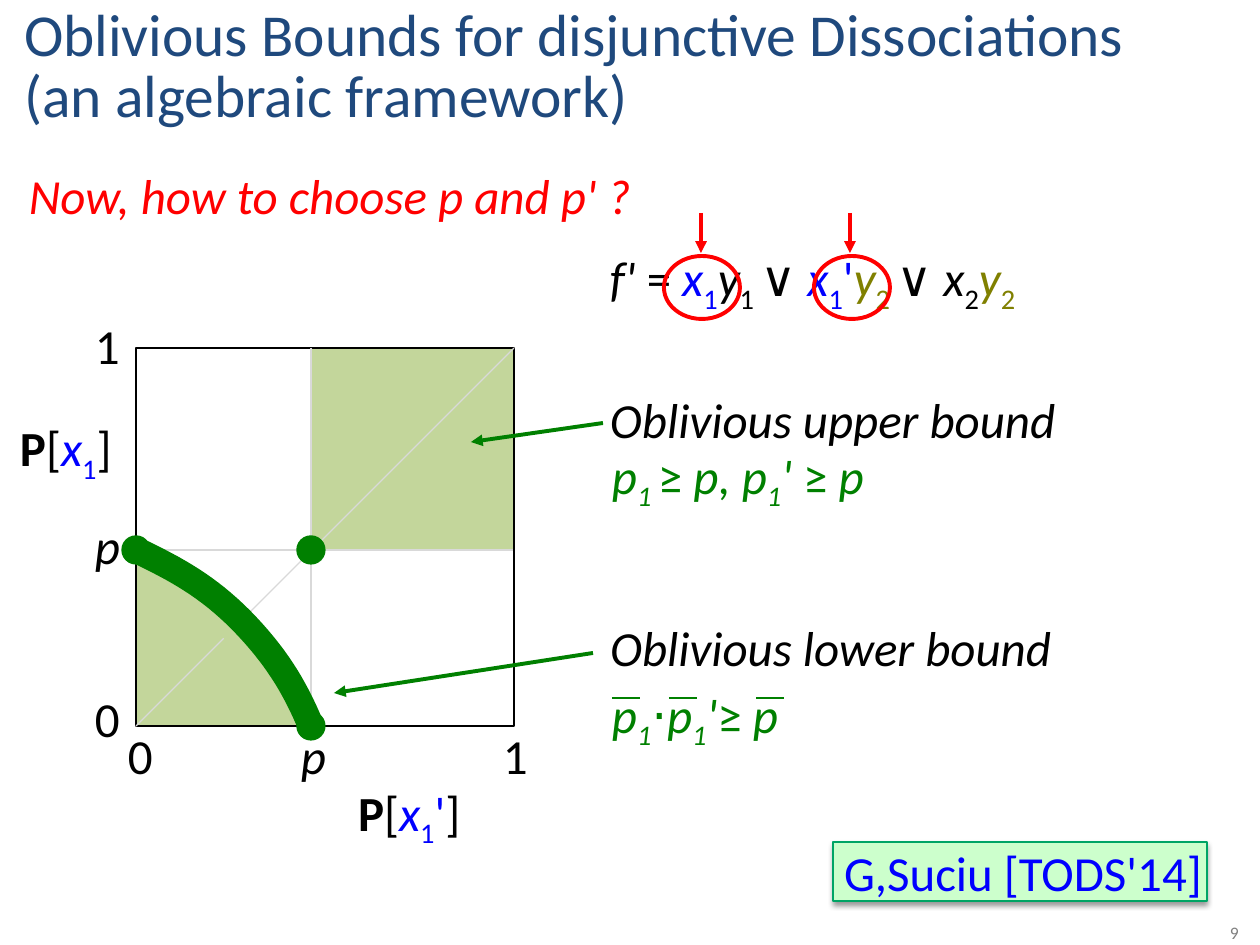
from dataclasses import dataclass
from typing import NamedTuple, Optional

from lxml.etree import SubElement
from pptx import Presentation
from pptx.dml.color import RGBColor
from pptx.enum.shapes import MSO_CONNECTOR, MSO_SHAPE
from pptx.enum.text import MSO_ANCHOR, MSO_AUTO_SIZE, PP_ALIGN
from pptx.oxml.ns import qn
from pptx.util import Emu, Pt

PX_PER_INCH = 126


@dataclass(frozen=True)
class Theme:
    font: str = "Calibri"
    title_size: int = 34
    body_size: int = 28
    number_size: int = 10
    title: RGBColor = RGBColor(0x1F, 0x49, 0x7D)
    black: RGBColor = RGBColor(0, 0, 0)
    blue: RGBColor = RGBColor(0, 0, 0xFF)
    olive: RGBColor = RGBColor(0x80, 0x80, 0)
    green: RGBColor = RGBColor(0, 0x80, 0)
    red: RGBColor = RGBColor(0xFF, 0, 0)
    region: RGBColor = RGBColor(0xC3, 0xD6, 0x9B)
    guide: RGBColor = RGBColor(0xD9, 0xD9, 0xD9)
    number: RGBColor = RGBColor(0x80, 0x80, 0x80)
    badge_fill: RGBColor = RGBColor(0xCC, 0xFF, 0xCC)
    badge_line: RGBColor = RGBColor(0, 0xA4, 0x65)


THEME = Theme()


class Piece(NamedTuple):
    text: str
    color: RGBColor = THEME.black
    italic: bool = False
    bold: bool = False
    subscript: bool = False


class Box(NamedTuple):
    left: int
    top: int
    width: int
    height: int


class Point(NamedTuple):
    x: int
    y: int


class Label(NamedTuple):
    box: Box
    pieces: list[Piece]
    size: int = THEME.body_size


class Stroke(NamedTuple):
    start: Point
    end: Point
    color: RGBColor
    weight: float
    arrow: bool = False


def px(value: float) -> Emu:
    return Emu(round(value * 914400 / PX_PER_INCH))


def prepare_frame(frame) -> None:
    frame.margin_left = frame.margin_right = frame.margin_top = frame.margin_bottom = 0
    frame.word_wrap = False
    frame.auto_size = MSO_AUTO_SIZE.NONE
    frame.vertical_anchor = MSO_ANCHOR.TOP
    frame.paragraphs[0].alignment = PP_ALIGN.LEFT


def format_run(run, piece: Piece, size: int) -> None:
    run.font.name = THEME.font
    run.font.size = Pt(size)
    run.font.color.rgb = piece.color
    run.font.italic = piece.italic
    run.font.bold = piece.bold
    if piece.subscript:
        run.font._element.set("baseline", "-25000")


def write_pieces(frame, pieces: list[Piece], size: int) -> None:
    prepare_frame(frame)
    for piece in pieces:
        run = frame.paragraphs[0].add_run()
        run.text = piece.text
        format_run(run, piece, size)


def draw_label(shapes, label: Label) -> None:
    textbox = shapes.add_textbox(*map(px, label.box))
    write_pieces(textbox.text_frame, label.pieces, label.size)


def paint(shape, fill: Optional[RGBColor], line: Optional[RGBColor], weight: float) -> None:
    shape.shadow.inherit = False
    if fill is None:
        shape.fill.background()
    else:
        shape.fill.solid()
        shape.fill.fore_color.rgb = fill
    if line is None:
        shape.line.fill.background()
    else:
        shape.line.color.rgb = line
        shape.line.width = Pt(weight)


def draw_shape(shapes, kind, box: Box, fill=None, line=None, weight: float = 0.75):
    shape = shapes.add_shape(kind, *map(px, box))
    paint(shape, fill, line, weight)
    return shape


def draw_stroke(shapes, stroke: Stroke) -> None:
    connector = shapes.add_connector(MSO_CONNECTOR.STRAIGHT, *map(px, stroke.start + stroke.end))
    connector.line.color.rgb = stroke.color
    connector.line.width = Pt(stroke.weight)
    properties = connector.element.spPr
    if stroke.arrow:
        SubElement(properties.find(qn("a:ln")), qn("a:tailEnd"), type="triangle")
    SubElement(properties, qn("a:effectLst"))


def curve_points(start: Point, segments: list[tuple], steps: int = 16) -> list[tuple]:
    points = [start]
    for first, second, end in segments:
        for step in range(1, steps + 1):
            t = step / steps
            points.append(tuple(
                (1 - t) ** 3 * a + 3 * (1 - t) ** 2 * t * b + 3 * (1 - t) * t ** 2 * c + t ** 3 * d
                for a, b, c, d in zip(start, first, second, end)))
        start = end
    return points


def draw_outline(shapes, points: list[tuple], close: bool, line=None, weight: float = 0) -> None:
    vertices = [(px(x), px(y)) for x, y in points]
    builder = shapes.build_freeform(*vertices[0])
    builder.add_line_segments(vertices[1:], close=close)
    paint(builder.convert_to_shape(), THEME.region, line, weight)


def draw_title(slide) -> None:
    title = slide.shapes.title
    title.left, title.top, title.width, title.height = map(px, Box(24, 8, 1114, 125))
    frame = title.text_frame
    frame.text = "Oblivious Bounds for disjunctive Dissociations\v(an algebraic framework)"
    prepare_frame(frame)
    frame.paragraphs[0].line_spacing = 0.85
    for run in frame.paragraphs[0].runs:
        format_run(run, Piece(run.text, THEME.title), THEME.title_size)


def draw_plot(shapes) -> None:
    left, top, side = 136, 348, 378
    right, bottom = left + side, top + side
    p = Point(311, 550)
    start, end = Point(p.x, bottom), Point(left, p.y)
    area = curve_points(start, [((290, 688), (270, 651), (241, 621)), ((212, 592), end, end)])
    draw_outline(shapes, area + [(left, bottom)], True)
    draw_shape(shapes, MSO_SHAPE.RECTANGLE, Box(p.x, top, right - p.x, p.y - top), THEME.region)

    grid = shapes.add_group_shape().shapes
    draw_stroke(grid, Stroke(end, Point(right, p.y), THEME.guide, 0.75))
    draw_shape(grid, MSO_SHAPE.RECTANGLE, Box(left, top, side, side), None, THEME.black)
    draw_stroke(grid, Stroke(Point(left, bottom), Point(right, top), THEME.guide, 0.75))
    draw_stroke(grid, Stroke(Point(p.x, top), start, THEME.guide, 0.75))

    arc = curve_points(start, [((294, 685), (275, 655), (241, 620)), ((208, 587), (178, 570), end)])
    draw_outline(shapes, arc, False, THEME.green, 15)
    for x, y in (p, end, start):
        draw_shape(shapes, MSO_SHAPE.OVAL, Box(x - 12, y - 12, 24, 24), THEME.green, THEME.green, 3)


def draw_badge(shapes) -> None:
    badge = draw_shape(shapes, MSO_SHAPE.RECTANGLE, Box(833, 842, 374, 59), THEME.badge_fill, THEME.badge_line)
    write_pieces(badge.text_frame, [Piece(" G,Suciu [TODS'14]", THEME.blue)], THEME.body_size)
    shadow = SubElement(badge.element.spPr.find(qn("a:effectLst")), qn("a:outerShdw"),
                        blurRad="38100", dist="25400", dir="5400000", rotWithShape="0")
    color = SubElement(shadow, qn("a:srgbClr"), val=str(THEME.black))
    SubElement(color, qn("a:alpha"), val="40000")


def variable(name: str, index: str, color: RGBColor, index_color: RGBColor) -> list[Piece]:
    return [Piece(name, color, italic=True), Piece(index, index_color, subscript=True)]


def green(text: str, italic: bool = True, subscript: bool = False) -> Piece:
    return Piece(text, THEME.green, italic, False, subscript)


def main() -> None:
    presentation = Presentation()
    presentation.slide_width, presentation.slide_height = px(1260), px(945)
    slide = presentation.slides.add_slide(presentation.slide_layouts[5])
    shapes = slide.shapes
    draw_title(slide)
    draw_plot(shapes)

    x1 = variable("x", "1", THEME.blue, THEME.blue)
    prime = Piece("'", THEME.blue)
    axis_start, axis_end = [Piece("P", bold=True), Piece("[")], [Piece("]")]
    formula = [Piece("f' ", italic=True), Piece("= "), *x1,
               *variable("y", "1 ", THEME.black, THEME.black), Piece("∨ "), *x1, prime,
               *variable("y", "2 ", THEME.olive, THEME.olive), Piece("∨ "),
               *variable("x", "2", THEME.black, THEME.black),
               *variable("y", "2", THEME.olive, THEME.olive)]
    upper = [green("p"), green("1 ", subscript=True), green("≥", False), green(" p, p"),
             green("1", subscript=True), green("' "), green("≥", False), green(" p")]
    lower = [green("p"), green("1", subscript=True), green("⋅", False), green("p"),
             green("1", subscript=True), green("'"), green("≥", False), green(" p")]
    ticks = [("p", 301, 725), ("1", 503, 725), ("0", 128, 725),
             ("0", 95, 688), ("p", 95, 515), ("1", 95, 315)]
    labels = [Label(Box(x, y, 27, 59), [Piece(text, italic=text == "p")]) for text, x, y in ticks]
    labels += [
        Label(Box(610, 389, 455, 59), [Piece("Oblivious upper bound", italic=True)]),
        Label(Box(610, 617, 450, 59), [Piece("Oblivious lower bound", italic=True)]),
        Label(Box(610, 248, 464, 59), formula),
        Label(Box(612, 445, 282, 59), upper),
        Label(Box(612, 684, 185, 59), lower),
        Label(Box(358, 782, 106, 59), axis_start + x1 + [prime] + axis_end),
        Label(Box(20, 418, 95, 59), axis_start + x1 + axis_end),
        Label(Box(29, 166, 615, 59), [Piece("Now, how to choose p and p' ?", THEME.red, True)]),
        Label(Box(1230, 922, 20, 21), [Piece("9", THEME.number)], THEME.number_size),
    ]
    for label in labels:
        draw_label(shapes, label)

    strokes = [Stroke(Point(603, 423), Point(471, 442), THEME.green, 2.25, True),
               Stroke(Point(593, 653), Point(334, 693), THEME.green, 2.25, True)]
    strokes += [Stroke(Point(x, 698), Point(x + 28, 698), THEME.green, 1) for x in (612, 669, 756)]
    strokes += [Stroke(Point(x, 213), Point(x, 253), THEME.red, 2.25, True) for x in (701, 850)]
    for stroke in strokes:
        draw_stroke(shapes, stroke)

    draw_badge(shapes)
    for x in (664, 814):
        draw_shape(shapes, MSO_SHAPE.OVAL, Box(x, 256, 76, 63), None, THEME.red, 2.25)
    presentation.save("out.pptx")


if __name__ == "__main__":
    main()
